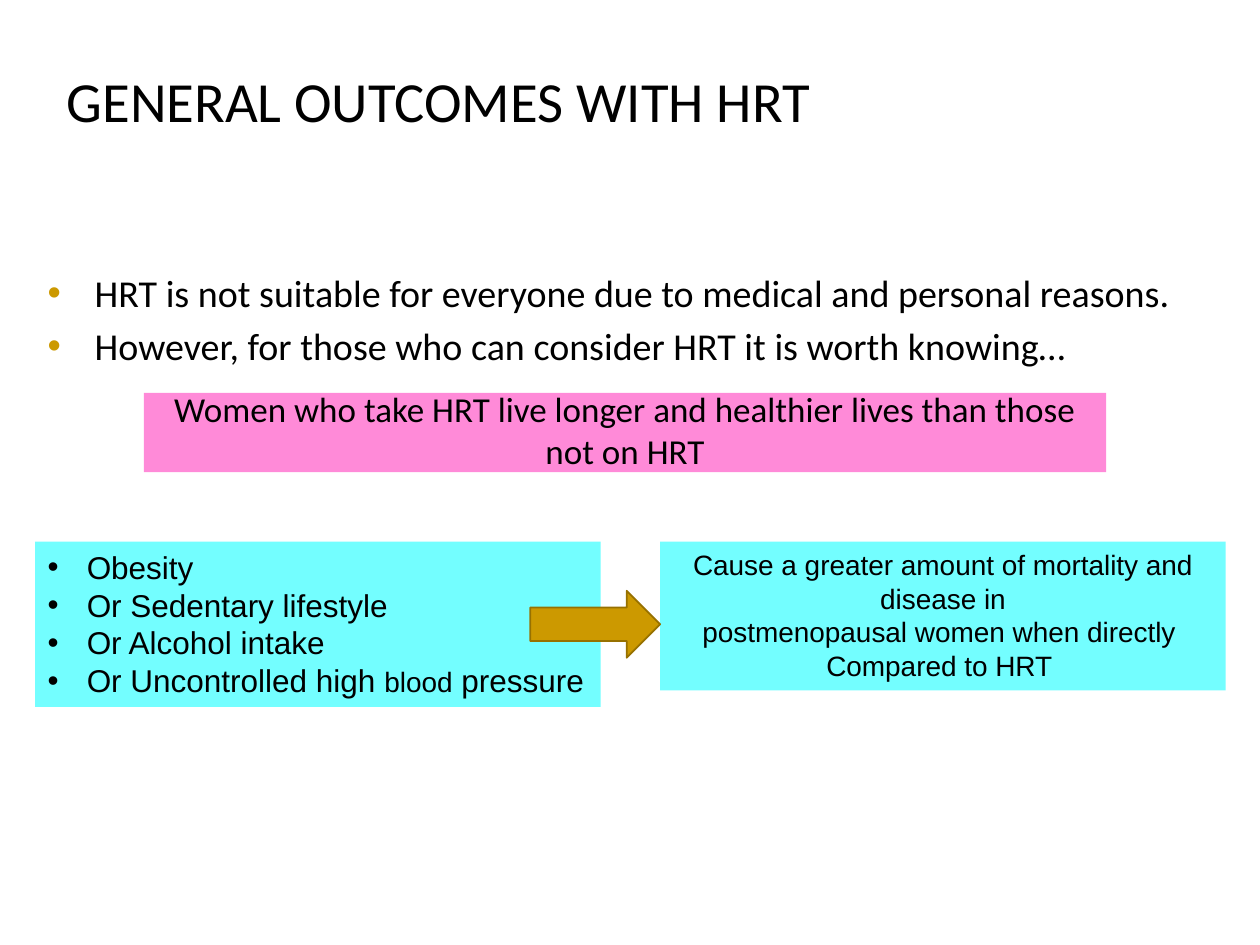
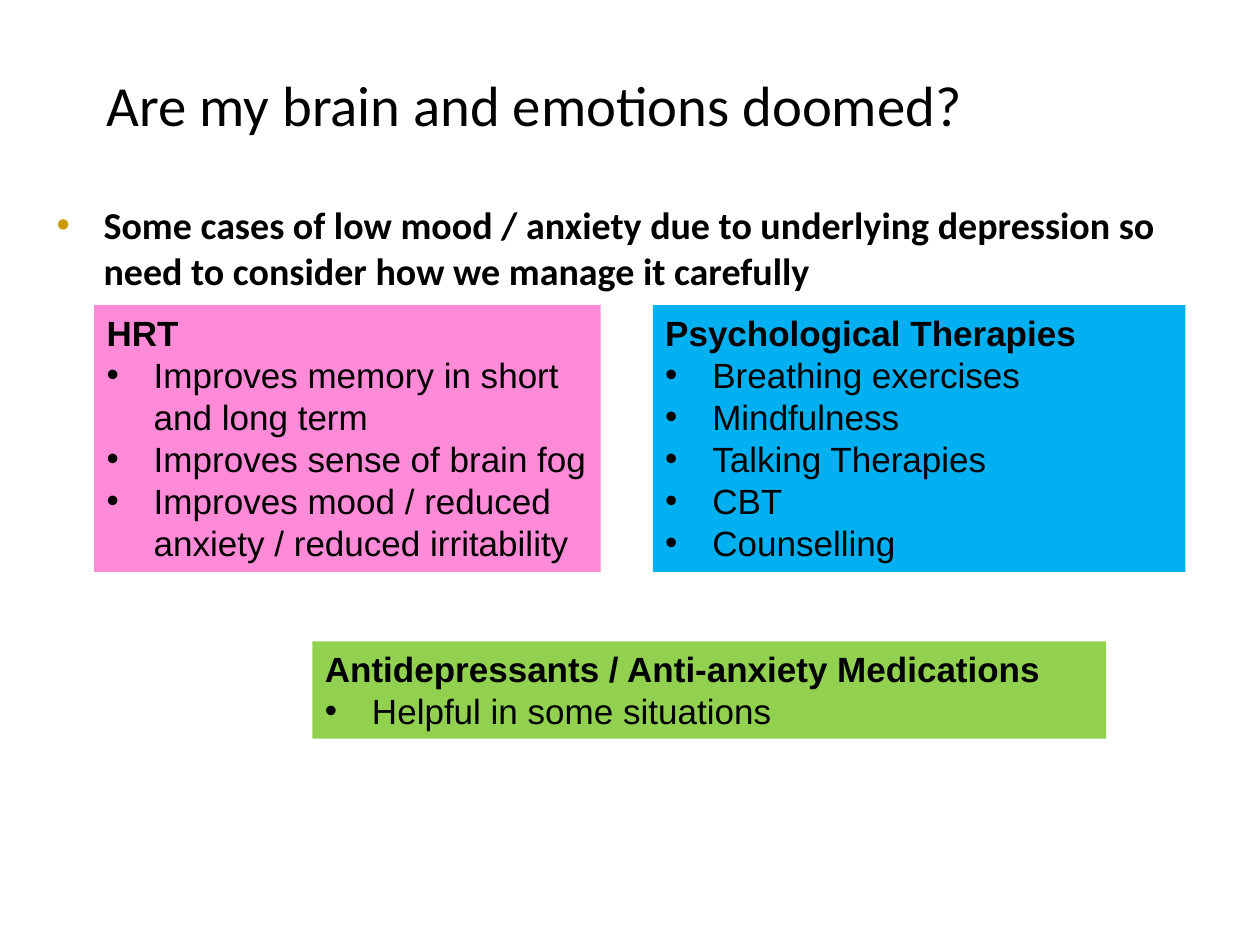
from lxml.etree import SubElement
from pptx import Presentation
from pptx.dml.color import RGBColor
from pptx.enum.shapes import MSO_SHAPE
from pptx.enum.text import MSO_ANCHOR, MSO_AUTO_SIZE, PP_ALIGN
from pptx.oxml.ns import qn
from pptx.util import Cm, Pt

BLACK = RGBColor(0x00, 0x00, 0x00)
PINK = RGBColor(0xFF, 0x8A, 0xD8)
CYAN = RGBColor(0x73, 0xFE, 0xFF)
BLUE = RGBColor(0x00, 0xB0, 0xF0)
GREEN = RGBColor(0x92, 0xD0, 0x50)
GOLD = RGBColor(0xCC, 0x99, 0x00)
BROWN = RGBColor(0x97, 0x71, 0x00)

SERIES = "Calibri"
PLAIN = "Arial"
LEAD = 21.7

OUTCOMES = {
    "title": ("GENERAL OUTCOMES WITH HRT", (1.09, 0.74, 18, 2.54)),
    "lead": (
        [
            "HRT is not suitable for everyone due to medical and personal reasons.",
            "However, for those who can consider HRT it is worth knowing…",
        ],
        (0.71, 5.31, 23.6, 1.96),
        False,
    ),
}
CLAIM = "Women who take HRT live longer and healthier lives than those not on HRT"
RISKS = [
    "Obesity",
    "Or Sedentary lifestyle",
    "Or Alcohol intake",
    ["Or Uncontrolled high ", "blood", " pressure"],
]
EFFECTS = [
    "Cause a greater amount of mortality and disease in",
    "postmenopausal women when directly ",
    "Compared to HRT ",
]

MOOD = {
    "title": ("Are my brain and emotions doomed?", (1.9, 1.32, 18.1, 1.55)),
    "lead": (
        [
            "Some cases of low mood / anxiety due to underlying depression "
            "so need to consider how we manage it carefully",
        ],
        (0.89, 3.94, 23.2, 1.96),
        True,
    ),
}
CARDS = [
    (
        "HRT",
        [
            "Improves memory in short and long term",
            "Improves sense of brain fog",
            "Improves mood / reduced anxiety / reduced irritability",
        ],
        PINK,
        (1.9, 6.15, 10.21, 5.38),
    ),
    (
        "Psychological Therapies",
        ["Breathing exercises", "Mindfulness", "Talking Therapies", "CBT", "Counselling"],
        BLUE,
        (13.16, 6.15, 10.74, 5.38),
    ),
    (
        "Antidepressants / Anti-anxiety Medications",
        ["Helpful in some situations"],
        GREEN,
        (6.3, 12.93, 16, 1.96),
    ),
]


def place(area):
    return [Cm(n) for n in area]


def style(font, face, size, bold=False):
    font.name = face
    font.size = Pt(size)
    font.bold = bold
    font.color.rgb = BLACK


def bullet(para, indent, color=BLACK):
    props = para._p.get_or_add_pPr()
    props.set("marL", str(Cm(indent)))
    props.set("indent", str(-Cm(indent)))
    tint = SubElement(props, qn("a:buClr"))
    SubElement(tint, qn("a:srgbClr")).set("val", str(color))
    SubElement(props, qn("a:buFont")).set("typeface", PLAIN)
    SubElement(props, qn("a:buChar")).set("char", "•")


def write(frame, lines, face, size, bold=False, align=PP_ALIGN.LEFT):
    frame.word_wrap = True
    frame.vertical_anchor = MSO_ANCHOR.TOP
    for i, line in enumerate(lines):
        para = frame.paragraphs[0] if i == 0 else frame.add_paragraph()
        for part in [line] if isinstance(line, str) else line:
            run = para.add_run()
            run.text = part
            style(run.font, face, size, bold)
        para.alignment = align
    return frame.paragraphs


def panel(slide, area, fill, kind=MSO_SHAPE.RECTANGLE):
    shape = slide.shapes.add_shape(kind, *place(area))
    shape.shadow.inherit = False
    shape.fill.solid()
    shape.fill.fore_color.rgb = fill
    shape.line.fill.background()
    return shape


def start(deck, page):
    slide = deck.slides.add_slide(deck.slide_layouts[5])
    text, area = page["title"]
    title = slide.shapes.title
    title.left, title.top, title.width, title.height = place(area)
    frame = title.text_frame
    frame.auto_size = MSO_AUTO_SIZE.NONE
    write(frame, [text], SERIES, 32.4)
    frame.vertical_anchor = MSO_ANCHOR.MIDDLE

    lines, area, bold = page["lead"]
    box = slide.shapes.add_textbox(*place(area))
    for i, para in enumerate(write(box.text_frame, lines, SERIES, LEAD, bold)):
        bullet(para, 0.95, GOLD)
        if i:
            para.space_before = Pt(round(LEAD * 0.2, 1))
    return slide


def outcomes(deck):
    slide = start(deck, OUTCOMES)
    frame = panel(slide, (2.9, 7.92, 19.4, 1.6), PINK).text_frame
    write(frame, [CLAIM], SERIES, 20, align=PP_ALIGN.CENTER)
    frame.vertical_anchor = MSO_ANCHOR.MIDDLE
    frame.margin_top = 0

    left = panel(slide, (0.71, 10.92, 11.4, 3.33), CYAN)
    paras = write(left.text_frame, RISKS, PLAIN, 18)
    for para in paras:
        bullet(para, 0.79)
    paras[-1].runs[1].font.size = Pt(16)

    right = panel(slide, (13.31, 10.92, 11.4, 3), CYAN)
    write(right.text_frame, EFFECTS, PLAIN, 16, align=PP_ALIGN.CENTER)

    arrow = panel(slide, (10.69, 11.91, 2.62, 1.35), GOLD, MSO_SHAPE.RIGHT_ARROW)
    arrow.line.color.rgb = BROWN
    arrow.line.width = Pt(1)


def mood(deck):
    slide = start(deck, MOOD)
    for head, items, fill, area in CARDS:
        frame = panel(slide, area, fill).text_frame
        first, *rest = write(frame, [head] + items, PLAIN, 20)
        first.runs[0].font.bold = True
        for para in rest:
            bullet(para, 0.95)


def main():
    deck = Presentation()
    deck.slide_width, deck.slide_height = Cm(25.4), Cm(19.05)
    outcomes(deck)
    mood(deck)
    deck.save("out.pptx")


if __name__ == "__main__":
    main()
